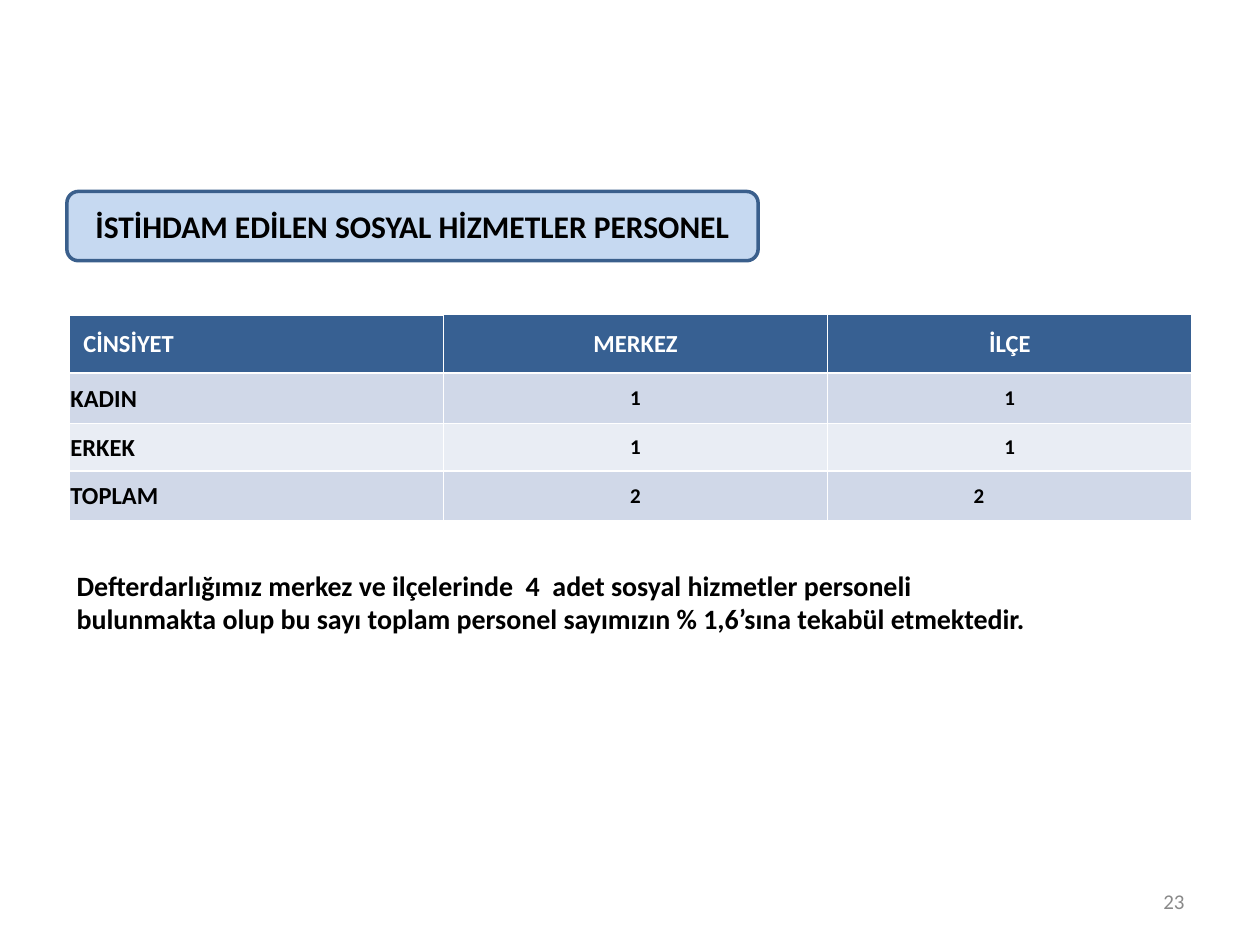
import pptx
import pptx.util
import pptx.dml.color
import pptx.enum.shapes
import pptx.enum.text
import pptx.oxml.ns
import lxml.etree

Pt = pptx.util.Pt
RGBColor = pptx.dml.color.RGBColor
ALIGN = pptx.enum.text.PP_ALIGN
MIDDLE = pptx.enum.text.MSO_ANCHOR.MIDDLE
TOP = pptx.enum.text.MSO_ANCHOR.TOP

BLACK = RGBColor(0x00, 0x00, 0x00)
WHITE = RGBColor(0xFF, 0xFF, 0xFF)
GREY = RGBColor(0x89, 0x89, 0x89)
PALE_BLUE = RGBColor(0xC6, 0xD9, 0xF1)
FRAME_BLUE = RGBColor(0x3A, 0x5F, 0x8C)
HEADER_BLUE = RGBColor(0x37, 0x60, 0x92)
BANDS = [RGBColor(0xD0, 0xD8, 0xE8), RGBColor(0xE9, 0xED, 0xF4)]

TITLE = "İSTİHDAM EDİLEN SOSYAL HİZMETLER PERSONEL"
STAFF = [
    ("CİNSİYET", "MERKEZ", "İLÇE"),
    ("KADIN", "1", "1"),
    ("ERKEK", "1", "1"),
    ("TOPLAM", "2", "2"),
]
SUMMARY = (
    "Defterdarlığımız merkez ve ilçelerinde  4  adet sosyal hizmetler personeli "
    "bulunmakta olup bu sayı toplam personel sayımızın % 1,6’sına tekabül etmektedir."
)
PAGE_NUMBER = "23"

TITLE_AREA = (38.2, 109.4, 395, 39.6)
TABLE_AREA = (39.6, 179.3, 641.5, 118.1)
SUMMARY_AREA = (36.7, 321.1, 561.6, 46)
NUMBER_AREA = (516.2, 500.4, 167.8, 28.8)
COLUMN_WIDTHS = [213.8, 219.6, 208.1]
ROW_HEIGHTS = [33.8, 28.8, 27.4, 28.1]
CELL_INSET = 0.7
EXTRA_INSETS = {(0, 0): ("margin_left", 8), (3, 2): ("margin_right", 36)}


def write(frame, text, size, color=BLACK, bold=True, align=ALIGN.LEFT):
    para = frame.paragraphs[0]
    para.alignment = align
    span = para.add_run()
    span.text = text
    span.font.name = "Calibri"
    span.font.size = Pt(size)
    span.font.bold = bold
    span.font.color.rgb = color


def add_text_box(page, area, text, anchor, **style):
    box = page.shapes.add_textbox(*map(Pt, area))
    box.text_frame.word_wrap = True
    box.text_frame.vertical_anchor = anchor
    write(box.text_frame, text, **style)


def border_cell(cell, top_width):
    properties = cell._tc.get_or_add_tcPr()
    qn = pptx.oxml.ns.qn
    widths = {"a:lnL": 1, "a:lnR": 1, "a:lnT": top_width, "a:lnB": 1}
    for position, (side, width) in enumerate(widths.items()):
        line = lxml.etree.Element(qn(side), w=str(Pt(width)))
        fill = lxml.etree.SubElement(line, qn("a:solidFill"))
        lxml.etree.SubElement(fill, qn("a:srgbClr"), val=str(WHITE))
        properties.insert(position, line)


def add_title(page):
    frame = page.shapes.add_shape(
        pptx.enum.shapes.MSO_SHAPE.ROUNDED_RECTANGLE, *map(Pt, TITLE_AREA))
    frame.shadow.inherit = False
    frame.fill.solid()
    frame.fill.fore_color.rgb = PALE_BLUE
    frame.line.color.rgb = FRAME_BLUE
    frame.line.width = Pt(2)

    title = page.shapes.title
    title.left, title.top, title.width, title.height = map(Pt, TITLE_AREA)
    title.text_frame.vertical_anchor = MIDDLE
    title.text_frame.auto_size = pptx.enum.text.MSO_AUTO_SIZE.NONE
    write(title.text_frame, TITLE, size=18, align=ALIGN.CENTER)
    title._element.addprevious(frame._element)


def add_staff_table(page):
    table = page.shapes.add_table(
        len(STAFF), len(COLUMN_WIDTHS), *map(Pt, TABLE_AREA)).table
    for column, width in zip(table.columns, COLUMN_WIDTHS):
        column.width = Pt(width)
    for row, height in zip(table.rows, ROW_HEIGHTS):
        row.height = Pt(height)

    for row_index, values in enumerate(STAFF):
        header = row_index == 0
        for column_index, text in enumerate(values):
            first = column_index == 0
            cell = table.cell(row_index, column_index)
            cell.vertical_anchor = MIDDLE
            cell.margin_left = cell.margin_right = cell.margin_top = Pt(CELL_INSET)
            cell.margin_bottom = Pt(0)
            if (row_index, column_index) in EXTRA_INSETS:
                side, inset = EXTRA_INSETS[row_index, column_index]
                setattr(cell, side, Pt(inset))
            cell.fill.solid()
            cell.fill.fore_color.rgb = HEADER_BLUE if header else BANDS[(row_index - 1) % 2]
            border_cell(cell, top_width=3 if header and first else 1)
            write(cell.text_frame, text,
                  size=14 if header or first else 12,
                  color=WHITE if header else BLACK,
                  align=ALIGN.LEFT if first else ALIGN.CENTER)


def main():
    deck = pptx.Presentation()
    deck.slide_width, deck.slide_height = Pt(720), Pt(540)
    page = deck.slides.add_slide(deck.slide_layouts.get_by_name("Title Only"))
    add_title(page)
    add_staff_table(page)
    add_text_box(page, SUMMARY_AREA, SUMMARY, TOP, size=16)
    add_text_box(page, NUMBER_AREA, PAGE_NUMBER, MIDDLE,
                 size=12, color=GREY, bold=False, align=ALIGN.RIGHT)
    deck.save("out.pptx")


if __name__ == "__main__":
    main()
